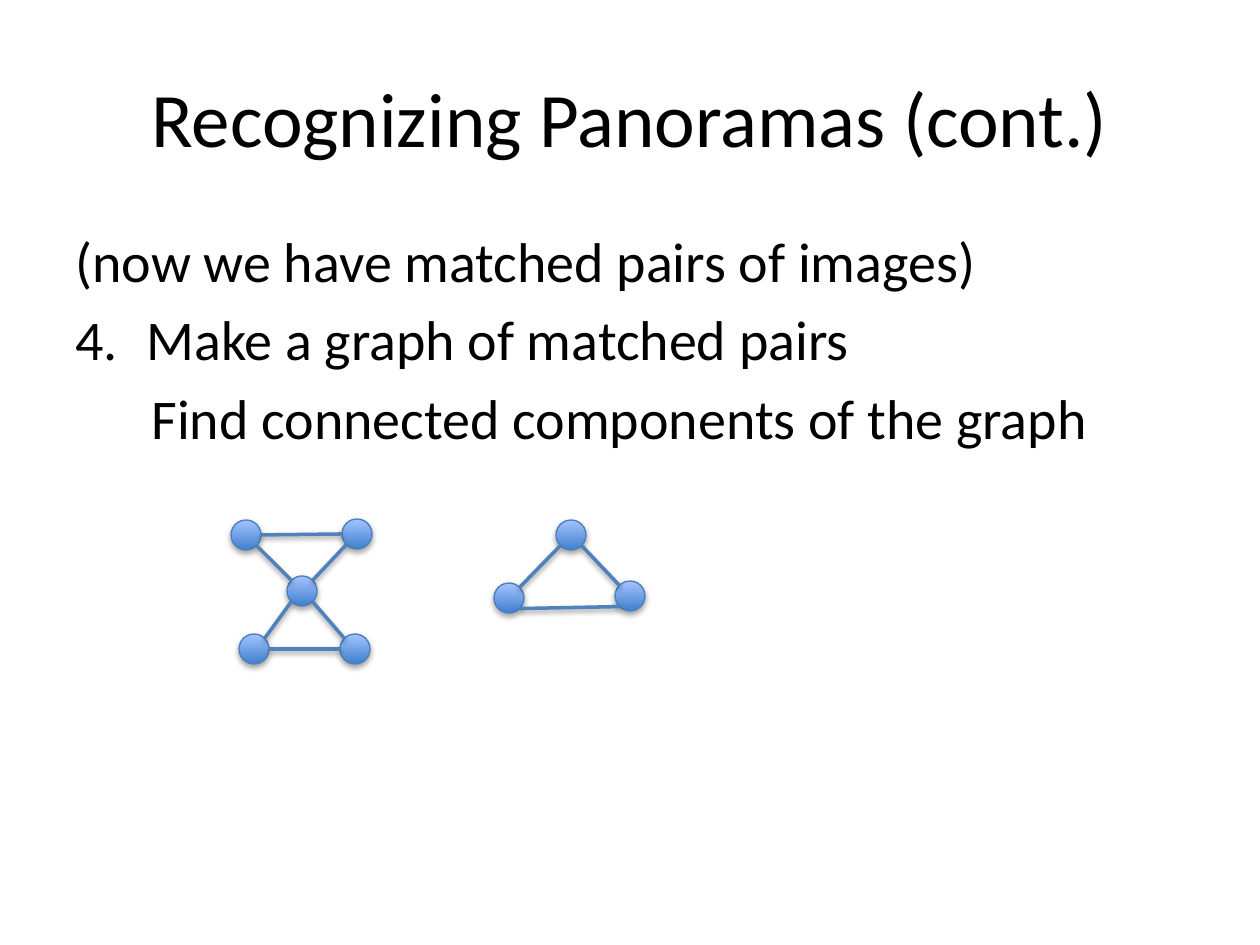
from math import sqrt

from lxml import etree
from pptx import Presentation
from pptx.dml.color import RGBColor
from pptx.enum.shapes import MSO_CONNECTOR, MSO_SHAPE
from pptx.enum.text import MSO_ANCHOR, PP_ALIGN
from pptx.oxml.ns import qn
from pptx.util import Pt

PX = 914400 / 126
ELLIPSE = MSO_SHAPE.OVAL
STRAIGHT = MSO_CONNECTOR.STRAIGHT
TOP, MIDDLE = MSO_ANCHOR.TOP, MSO_ANCHOR.MIDDLE
LEFT, CENTER = PP_ALIGN.LEFT, PP_ALIGN.CENTER

DIAGONAL = 1 / sqrt(2)
SITES = {
    "E": (1, 0),
    "W": (-1, 0),
    "NE": (DIAGONAL, -DIAGONAL),
    "NW": (-DIAGONAL, -DIAGONAL),
    "SE": (DIAGONAL, DIAGONAL),
    "SW": (-DIAGONAL, DIAGONAL),
}

NODES = {
    "upper left": (246, 535),
    "lower left": (254, 649),
    "lower right": (355, 649),
    "hub": (302, 591),
    "upper right": (357, 534),
    "base left": (509, 598),
    "base right": (630, 596),
    "apex": (571, 535),
}

EDGES = [
    ("apex", "SW", "base left", "NE"),
    ("apex", "SE", "base right", "NW"),
    ("base left", "SE", "base right", "SW"),
    ("upper right", "SW", "hub", "NE"),
    ("lower left", "NE", "hub", "SW"),
    ("upper left", "SE", "hub", "NW"),
    ("hub", "SE", "lower right", "NW"),
    ("upper left", "E", "upper right", "W"),
    ("lower left", "E", "lower right", "W"),
]


def emu(length):
    return round(length * PX)


def color(value):
    return RGBColor.from_string(value)


def write(para, text, size=32, align=LEFT, before=0, margin=0, hang=0, start=None):
    para.alignment = align
    para.space_before = Pt(before)
    props = para._p.get_or_add_pPr()
    props.set("marL", str(emu(margin)))
    props.set("indent", str(-emu(hang)))
    if start:
        etree.SubElement(props, qn("a:buFont"), typeface="+mj-lt")
        etree.SubElement(
            props, qn("a:buAutoNum"), type="arabicPeriod", startAt=str(start)
        )
    span = para.add_run()
    span.text = text
    span.font.name = Slide.font
    span.font.size = Pt(size)
    span.font.color.rgb = color(Slide.ink)


class Slide:
    font = "Calibri"
    ink = "000000"
    outline = "4B7EBC"
    edge_color = "4F81BD"
    gradient = ("3F80CE", "A4C4FF")
    radius = 15

    def __init__(self, deck):
        self.page = deck.slides.add_slide(deck.slide_layouts[6])

    def text(self, left, top, width, height, lines, anchor=TOP):
        box = self.page.shapes.add_textbox(*map(emu, (left, top, width, height)))
        frame = box.text_frame
        frame.word_wrap = True
        frame.vertical_anchor = anchor
        for index, (text, style) in enumerate(lines):
            para = frame.add_paragraph() if index else frame.paragraphs[0]
            write(para, text, **style)

    def shadow(self, item, distance, opacity):
        effects = etree.SubElement(item._element.spPr, qn("a:effectLst"))
        outer = etree.SubElement(
            effects, qn("a:outerShdw"), blurRad="40000", dist=str(distance),
            dir="5400000", rotWithShape="0",
        )
        shade = etree.SubElement(outer, qn("a:srgbClr"), val=self.ink)
        etree.SubElement(shade, qn("a:alpha"), val=str(opacity * 1000))

    def node(self, x, y):
        size = emu(2 * self.radius)
        disc = self.page.shapes.add_shape(
            ELLIPSE, emu(x - self.radius), emu(y - self.radius), size, size
        )
        disc.fill.gradient()
        disc.fill.gradient_angle = 90
        for stop, value, position in zip(
            disc.fill.gradient_stops, self.gradient, (0, 1)
        ):
            stop.color.rgb = color(value)
            stop.position = position
        disc.line.color.rgb = color(self.outline)
        disc.line.width = Pt(0.75)
        self.shadow(disc, 23000, 35)

    def edge(self, begin, begin_site, end, end_site):
        ends = [
            emu(center + self.radius * offset)
            for name, site in ((begin, begin_site), (end, end_site))
            for center, offset in zip(NODES[name], SITES[site])
        ]
        link = self.page.shapes.add_connector(STRAIGHT, *ends)
        link.line.color.rgb = color(self.edge_color)
        link.line.width = Pt(2)
        self.shadow(link, 20000, 38)


def main():
    deck = Presentation()
    deck.slide_width, deck.slide_height = emu(1260), emu(945)
    slide = Slide(deck)
    slide.text(
        63, 38, 1134, 157,
        [("Recognizing Panoramas (cont.)", dict(size=44, align=CENTER))],
        anchor=MIDDLE,
    )
    slide.text(63, 220, 1134, 624, [
        ("(now we have matched pairs of images)",
         dict(before=6.4, margin=48, hang=48)),
        ("Make a graph of matched pairs",
         dict(before=6.4, margin=71, hang=71, start=4)),
        ("Find connected components of the graph", dict(before=6.4, margin=76)),
    ])
    for center in NODES.values():
        slide.node(*center)
    for edge in EDGES:
        slide.edge(*edge)
    deck.save("out.pptx")


if __name__ == "__main__":
    main()
